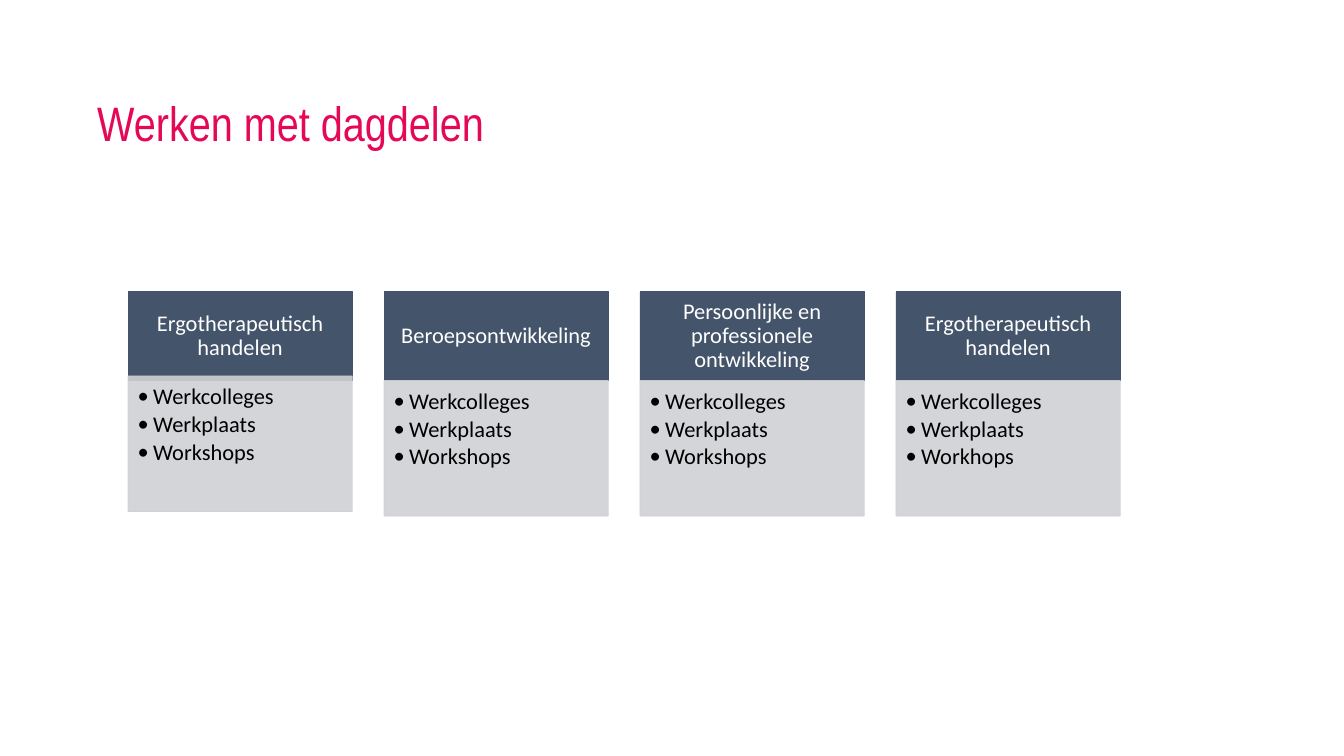
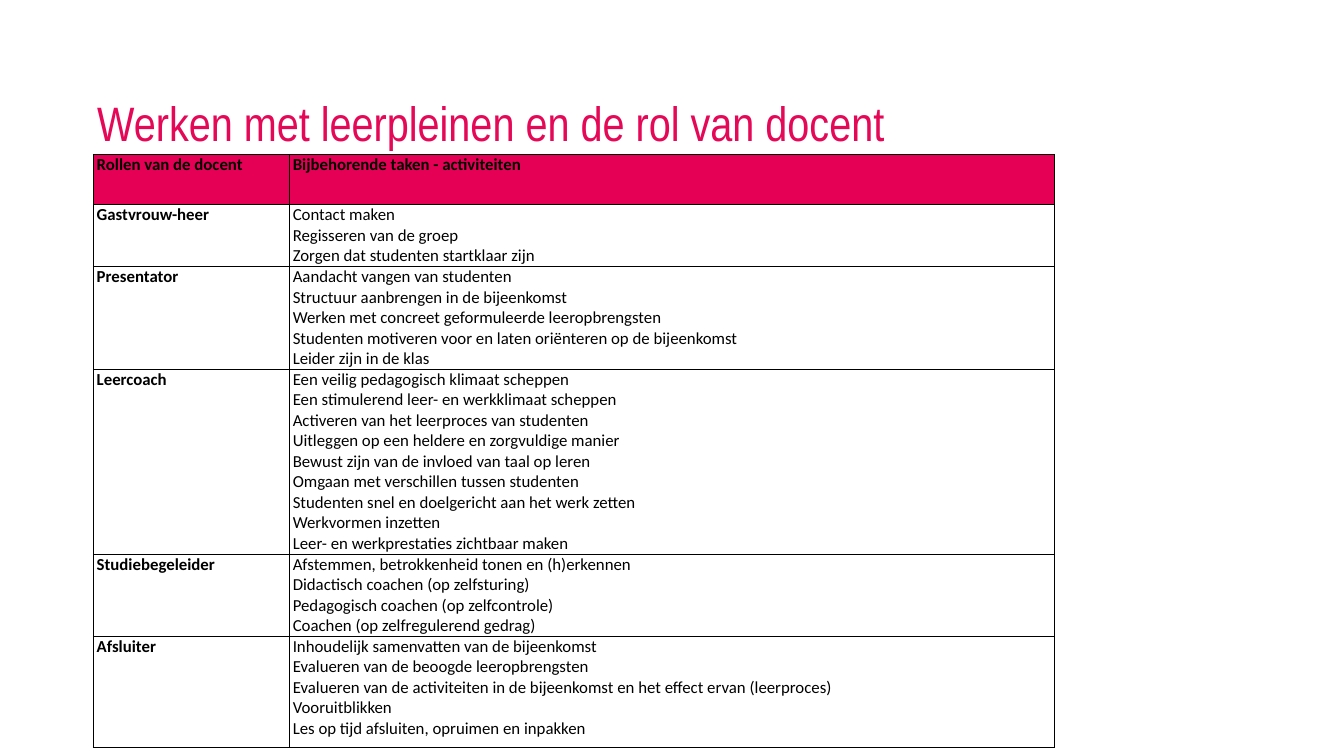
"""Build two slides on teaching blocks and the roles of the teacher."""
from lxml import etree
from pptx import Presentation
from pptx.dml.color import RGBColor
from pptx.enum.shapes import MSO_SHAPE
from pptx.enum.text import MSO_ANCHOR as ANCHOR, PP_ALIGN as ALIGN
from pptx.oxml import parse_xml
from pptx.oxml.ns import nsdecls, qn
from pptx.util import Inches, Pt

PINK = RGBColor(0xE5, 0x08, 0x56)
HEADER_PINK = RGBColor(0xE5, 0x00, 0x56)
SLATE = RGBColor(0x44, 0x54, 0x6A)
GREY = RGBColor(0xCF, 0xD1, 0xD4)
WHITE = RGBColor(0xFF, 0xFF, 0xFF)
BLACK = RGBColor(0x00, 0x00, 0x00)

prs = Presentation()
prs.slide_width, prs.slide_height = Inches(26.67), Inches(15)


def add_run(p, text, size, color, font="Calibri", bold=False):
    r = p.add_run()
    r.text = text
    r.font.size, r.font.name, r.font.bold = Pt(size), font, bold
    r.font.color.rgb = color


def add_box(s, x, y, w, h, color, insets, anchor):
    sp = s.shapes.add_shape(MSO_SHAPE.RECTANGLE, Inches(x), Inches(y), Inches(w), Inches(h))
    sp.shadow.inherit = False
    sp.fill.solid()
    sp.fill.fore_color.rgb = color
    sp.line.color.rgb = color
    sp.line.width = Pt(1)
    tf = sp.text_frame
    tf.word_wrap = True
    tf.vertical_anchor = anchor
    tf.margin_left, tf.margin_top, tf.margin_right, tf.margin_bottom = map(Inches, insets)
    return sp


slides = []
for title in ["Werken met dagdelen", "Werken met leerpleinen en de rol van docent"]:
    s = prs.slides.add_slide(prs.slide_layouts[6])
    tf = s.shapes.add_textbox(Inches(1.83), Inches(0.8), Inches(23), Inches(2.26)).text_frame
    tf.word_wrap = True
    tf.vertical_anchor = ANCHOR.BOTTOM
    p = tf.paragraphs[0]
    p.line_spacing = 0.9
    add_run(p, title, 69, PINK, "Arial Narrow")
    slides.append(s)

s = slides[0]
blocks = [
    ("Ergotherapeutisch handelen", 7.46, "Workshops"),
    ("Beroepsontwikkeling", 7.55, "Workshops"),
    ("Persoonlijke en professionele ontwikkeling", 7.55, "Workshops"),
    ("Ergotherapeutisch handelen", 7.55, "Workhops"),
]
for i, (heading, body_top, last_item) in enumerate(blocks):
    x = 2.54 + i * 5.08
    sp = add_box(s, x, 5.79, 4.45, 1.76, SLATE, (0.25, 0.14, 0.25, 0.14), ANCHOR.MIDDLE)
    p = sp.text_frame.paragraphs[0]
    p.alignment = ALIGN.CENTER
    p.line_spacing = 0.9
    add_run(p, heading, 32, WHITE)

    sp = add_box(s, x, body_top, 4.45, 2.69, GREY, (0.19, 0.19, 0.25, 0.28), ANCHOR.TOP)
    for clr in sp.fill._xPr.iter(qn("a:srgbClr")):
        etree.SubElement(clr, qn("a:alpha")).set("val", "90000")
    tf = sp.text_frame
    for j, item in enumerate(["Werkcolleges", "Werkplaats", last_item]):
        p = tf.add_paragraph() if j else tf.paragraphs[0]
        p.level = 1
        pPr = p._p.get_or_add_pPr()
        pPr.set("marL", str(Inches(0.31)))
        pPr.set("indent", str(-Inches(0.31)))
        etree.SubElement(pPr, qn("a:buFont")).set("typeface", "Calibri")
        etree.SubElement(pPr, qn("a:buChar")).set("char", "•")
        p.alignment = ALIGN.LEFT
        p.line_spacing = 0.9
        p.space_after = Pt(4.8)
        add_run(p, item, 32, BLACK)

s = slides[1]
roles = [
    ("Rollen van de docent", 1, ["Bijbehorende taken - activiteiten"]),
    ("Gastvrouw-heer", 1.23, [
        "Contact maken",
        "Regisseren van de groep",
        "Zorgen dat studenten startklaar zijn",
    ]),
    ("Presentator", 2.04, [
        "Aandacht vangen van studenten",
        "Structuur aanbrengen in de bijeenkomst",
        "Werken met concreet geformuleerde leeropbrengsten",
        "Studenten motiveren voor en laten oriënteren op de bijeenkomst",
        "Leider zijn in de klas",
    ]),
    ("Leercoach", 3.67, [
        "Een veilig pedagogisch klimaat scheppen",
        "Een stimulerend leer- en werkklimaat scheppen",
        "Activeren van het leerproces van studenten",
        "Uitleggen op een heldere en zorgvuldige manier",
        "Bewust zijn van de invloed van taal op leren",
        "Omgaan met verschillen tussen studenten",
        "Studenten snel en doelgericht aan het werk zetten",
        "Werkvormen inzetten",
        "Leer- en werkprestaties zichtbaar maken",
    ]),
    ("Studiebegeleider", 1.63, [
        "Afstemmen, betrokkenheid tonen en (h)erkennen",
        "Didactisch coachen (op zelfsturing)",
        "Pedagogisch coachen (op zelfcontrole)",
        "Coachen (op zelfregulerend gedrag)",
    ]),
    ("Afsluiter", 2.2, [
        "Inhoudelijk samenvatten van de bijeenkomst",
        "Evalueren van de beoogde leeropbrengsten",
        "Evalueren van de activiteiten in de bijeenkomst en het effect ervan (leerproces)",
        "Vooruitblikken",
        "Les op tijd afsluiten, opruimen en inpakken",
    ]),
]
height = sum(row[1] for row in roles)
tbl = s.shapes.add_table(len(roles), 2, Inches(1.85), Inches(3.06), Inches(19.07), Inches(height)).table
tbl.first_row = tbl.horz_banding = False
for col, width in zip(tbl.columns, (3.89, 15.18)):
    col.width = Inches(width)
for i, (role, row_height, tasks) in enumerate(roles):
    tbl.rows[i].height = Inches(row_height)
    for j, lines in enumerate([[role], tasks]):
        cell = tbl.cell(i, j)
        cell.margin_left = cell.margin_right = Inches(0.07)
        cell.margin_top = cell.margin_bottom = 0
        for side in ("lnL", "lnR", "lnT", "lnB"):
            cell._tc.get_or_add_tcPr().append(parse_xml(
                f'<a:{side} {nsdecls("a")} w="{Pt(1)}"><a:solidFill>'
                f'<a:srgbClr val="{BLACK}"/></a:solidFill></a:{side}>'))
        if i == 0:
            cell.fill.solid()
            cell.fill.fore_color.rgb = HEADER_PINK
        else:
            cell.fill.background()
        tf = cell.text_frame
        for k, line in enumerate(lines):
            p = tf.add_paragraph() if k else tf.paragraphs[0]
            add_run(p, line, 24, BLACK, bold=i == 0 or j == 0)

prs.save("out.pptx")
